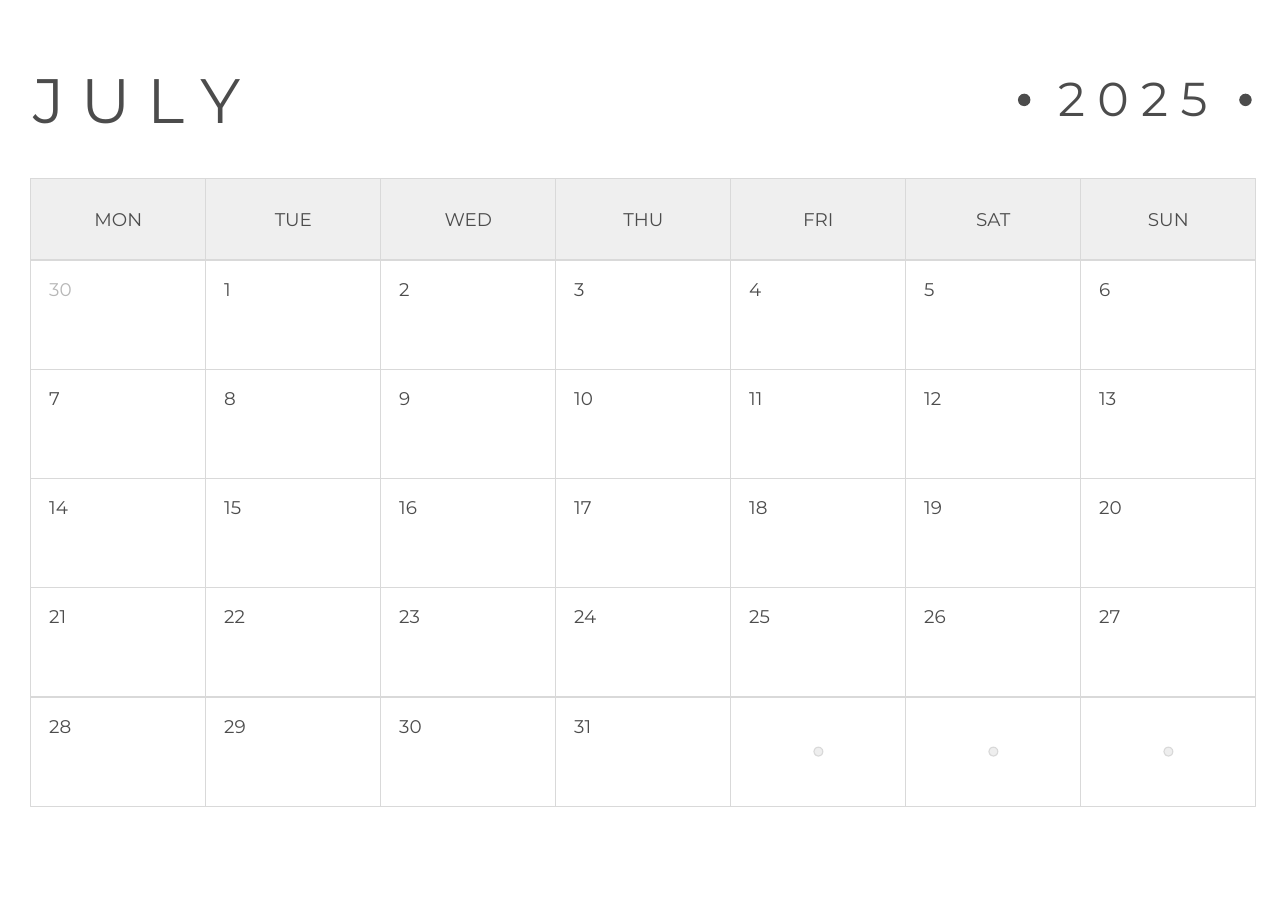
from pptx import Presentation
from pptx.dml.color import RGBColor
from pptx.enum.shapes import MSO_SHAPE
from pptx.enum.text import MSO_AUTO_SIZE, PP_ALIGN
from pptx.util import Pt

RECT = MSO_SHAPE.RECTANGLE
OVAL = MSO_SHAPE.OVAL
LEFT = PP_ALIGN.LEFT
CENTER = PP_ALIGN.CENTER
GROW = MSO_AUTO_SIZE.SHAPE_TO_FIT_TEXT

COLORS = {
    "ink": "4C4C4C",
    "muted": "B7B7B7",
    "head": "EFEFEF",
    "dot": "EEEEEE",
    "line": "D9D9D9",
}
FRAME = {
    "margin_left": 0,
    "margin_right": 0,
    "margin_top": 0,
    "margin_bottom": 0,
    "word_wrap": True,
    "auto_size": GROW,
}
DAYS = ["MON", "TUE", "WED", "THU", "FRI", "SAT", "SUN"]
WEEKS = 5
LAST = 31

GRID_X, GRID_Y = 20.2, 116.6
CELL_W, CELL_H, HEAD_H = 114.36, 71.38, 53.4
LABEL_W, LABEL_H = 41, 14.4
PAD_X, PAD_Y = 12, 11.7
DOT = 5.8


def color(name):
    return RGBColor.from_string(COLORS[name])


def apply(target, values):
    for name, value in values.items():
        setattr(target, name, value)


def add_text(slide, text, x, y, w, h, size=12, tint="ink", align=LEFT):
    box = slide.shapes.add_textbox(Pt(x), Pt(y), Pt(w), Pt(h))
    apply(box.text_frame, FRAME)
    para = box.text_frame.paragraphs[0]
    para.alignment = align
    run = para.add_run()
    run.text = text
    apply(run.font, {"name": "Montserrat", "size": Pt(size)})
    run.font.color.rgb = color(tint)


def add_form(slide, kind, x, y, w, h, fill=None, line=None):
    form = slide.shapes.add_shape(kind, Pt(x), Pt(y), Pt(w), Pt(h))
    form.shadow.inherit = False
    if fill:
        form.fill.solid()
        form.fill.fore_color.rgb = color(fill)
    else:
        form.fill.background()
    if line:
        form.line.color.rgb = color(line)
        form.line.width = Pt(0.75)
    else:
        form.line.fill.background()


def add_title(slide):
    add_text(slide, "J U L Y", 21.6, 39.6, 322, 49.7, size=41)
    add_text(slide, "2 0 2 5", 661.7, 45.4, 157, 37.4, size=31, align=CENTER)
    for x in (665.2, 809.8):
        add_form(slide, OVAL, x, 61.2, 8.2, 8.2, fill="ink")


def add_head(slide, day, x):
    add_form(slide, RECT, x, GRID_Y, CELL_W, HEAD_H, fill="head", line="line")
    add_text(slide, day, x + (CELL_W - LABEL_W) / 2, GRID_Y + 19.5,
             LABEL_W, LABEL_H, align=CENTER)


def add_cell(slide, date, x, y):
    add_form(slide, RECT, x, y, CELL_W, CELL_H, line="line")
    if date > LAST:
        add_form(slide, OVAL, x + (CELL_W - DOT) / 2, y + (CELL_H - DOT) / 2,
                 DOT, DOT, fill="dot", line="line")
    else:
        text, tint = (str(date), "ink") if date else ("30", "muted")
        add_text(slide, text, x + PAD_X, y + PAD_Y, LABEL_W, LABEL_H, tint=tint)


def add_month(slide):
    for col, day in enumerate(DAYS):
        x = GRID_X + col * CELL_W
        add_head(slide, day, x)
        for week in range(WEEKS):
            y = GRID_Y + HEAD_H + week * CELL_H
            add_cell(slide, week * len(DAYS) + col, x, y)


def main():
    deck = Presentation()
    apply(deck, {"slide_width": Pt(841.7), "slide_height": Pt(595.4)})
    slide = deck.slides.add_slide(deck.slide_layouts[6])
    add_title(slide)
    add_month(slide)
    deck.save("out.pptx")


if __name__ == "__main__":
    main()
